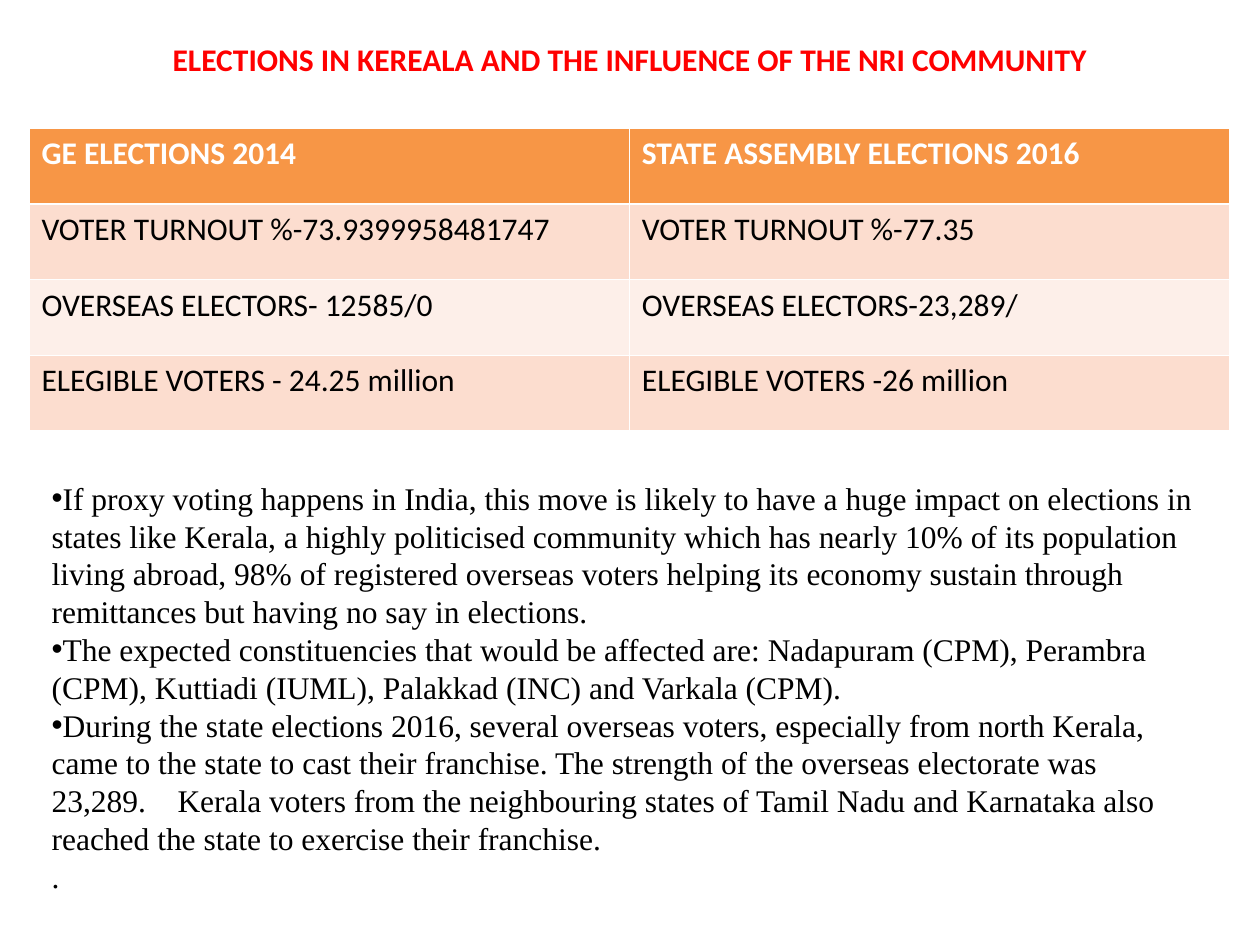
from pptx import Presentation
from pptx.dml.color import RGBColor
from pptx.enum.text import MSO_ANCHOR, MSO_AUTO_SIZE, PP_ALIGN
from pptx.oxml import parse_xml
from pptx.oxml.ns import nsdecls
from pptx.util import Inches, Pt

HUES = {"title": "FF0000", "head": "F79646", "odd": "FCDDCF",
        "even": "FDEFE9", "light": "FFFFFF", "ink": "000000"}
TITLE = "ELECTIONS IN KEREALA AND THE INFLUENCE OF THE NRI COMMUNITY"
ROWS = [
    ("GE ELECTIONS 2014", "STATE ASSEMBLY ELECTIONS 2016"),
    ("VOTER TURNOUT %-73.9399958481747", "VOTER TURNOUT %-77.35"),
    ("OVERSEAS ELECTORS- 12585/0", "OVERSEAS ELECTORS-23,289/"),
    ("ELEGIBLE VOTERS - 24.25 million", "ELEGIBLE VOTERS -26 million"),
]
POINTS = [
    "If proxy voting happens in India, this move is likely to have a huge impact on "
    "elections in states like Kerala, a highly politicised community which has nearly "
    "10% of its population living abroad, 98% of registered overseas voters helping its "
    "economy sustain through remittances but having no say in elections.",
    "The expected constituencies that would be affected are: Nadapuram (CPM), "
    "Perambra (CPM), Kuttiadi (IUML), Palakkad (INC) and Varkala (CPM).",
    "During the state elections 2016, several overseas voters, especially from north "
    "Kerala, came to the state to cast their franchise. The strength of the overseas "
    "electorate was\n23,289.    Kerala voters from the neighbouring states of Tamil Nadu "
    "and Karnataka also reached the state to exercise their franchise.",
    ".",
]


class Deck:
    """Holds the style and the current slide; lengths are shares of its size."""

    def __init__(self):
        self.show = Presentation()
        self.show.slide_width, self.show.slide_height = Inches(10), Inches(7.5)
        self.slide = self.show.slides.add_slide(self.show.slide_layouts[1])
        self.size = Pt(18)

    def box(self, left, top, width, height):
        wide, high = self.show.slide_width, self.show.slide_height
        return [int(wide * left), int(high * top), int(wide * width), int(high * height)]

    def place(self, shape, *area):
        shape.left, shape.top, shape.width, shape.height = self.box(*area)

    def style(self, para, hue, face="Calibri", bold=False):
        for run in para.runs:
            font = run.font
            font.name, font.size, font.bold = face, self.size, bold
            font.color.rgb = RGBColor.from_string(HUES[hue])

    def title(self, text, *area):
        shape = self.slide.shapes.title
        self.place(shape, *area)
        frame = shape.text_frame
        frame.text = text
        frame.vertical_anchor = MSO_ANCHOR.MIDDLE
        para = frame.paragraphs[0]
        para.alignment = PP_ALIGN.CENTER
        self.style(para, "title", bold=True)

    def table(self, rows, *area):
        grid = self.slide.shapes.add_table(len(rows), len(rows[0]), *self.box(*area)).table
        for r, row in enumerate(rows):
            fill = "head" if r == 0 else ("odd" if r % 2 else "even")
            for c, text in enumerate(row):
                cell = grid.cell(r, c)
                cell.text_frame.text = text
                cell.fill.solid()
                cell.fill.fore_color.rgb = RGBColor.from_string(HUES[fill])
                self.style(cell.text_frame.paragraphs[0],
                           "ink" if r else "light", bold=r == 0)

    def bullets(self, items, *area):
        shape = self.slide.placeholders[1]
        self.place(shape, *area)
        frame = shape.text_frame
        frame.auto_size = MSO_AUTO_SIZE.SHAPE_TO_FIT_TEXT
        for i, item in enumerate(items):
            para = frame.add_paragraph() if i else frame.paragraphs[0]
            para.text = item
            para.space_before = Pt(0)
            self.style(para, "ink", "Times New Roman")
            props = para._p.get_or_add_pPr()
            props.set("marL", "0")
            props.set("indent", "0")
            mark = "buNone" if item == "." else 'buChar char="•"'
            props.append(parse_xml(f"<a:{mark} {nsdecls('a')}/>"))


def main():
    deck = Deck()
    deck.title(TITLE, 0.05, 0, 0.9, 0.125)
    deck.table(ROWS, 0.023, 0.136, 0.953, 0.32)
    deck.bullets(POINTS, 0.031, 0.5, 0.945, 0.457)
    deck.show.save("out.pptx")


if __name__ == "__main__":
    main()
